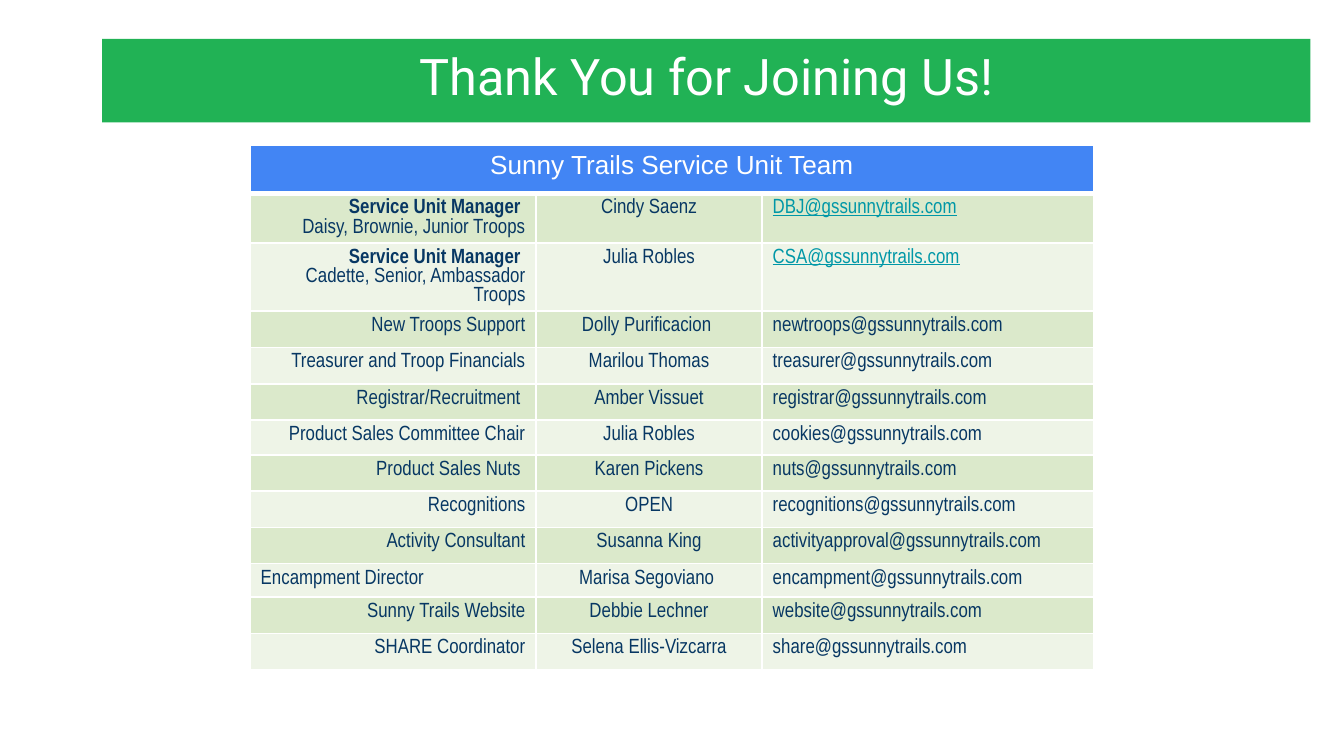
"""Build the closing slide with the service unit team contact table."""
from lxml import etree
from pptx import Presentation, util as u
from pptx.dml.color import RGBColor
from pptx.enum import shapes, text
from pptx.oxml.ns import qn

COLORS = {"white": "FFFFFF", "banner": "21B255", "header": "4285F4", "navy": "073763",
          "link": "0097A7", "band": "DBE9CB", "light": "EEF4E7"}
LEFT, CENTER, RIGHT = text.PP_ALIGN.LEFT, text.PP_ALIGN.CENTER, text.PP_ALIGN.RIGHT
TEAM = [
    ("Service Unit Manager \nDaisy, Brownie, Junior Troops", "Cindy Saenz", "DBJ"),
    ("Service Unit Manager \nCadette, Senior, Ambassador Troops", "Julia Robles", "CSA"),
    ("New Troops Support", "Dolly Purificacion ", "newtroops"),
    ("Treasurer and Troop Financials", "Marilou Thomas", "treasurer"),
    ("Registrar/Recruitment ", "Amber Vissuet", "registrar"),
    ("Product Sales Committee Chair", "Julia Robles", "cookies"),
    ("Product Sales Nuts ", "Karen Pickens", "nuts"),
    ("Recognitions", "OPEN", "recognitions"),
    ("Activity Consultant", "Susanna King", "activityapproval"),
    ("Encampment Director", "Marisa Segoviano ", "encampment"),
    ("Sunny Trails Website", "Debbie Lechner", "website"),
    ("SHARE Coordinator", "Selena Ellis-Vizcarra", "share"),
]
WIDTHS = [2.13, 1.68, 2.47]
HEIGHTS = [0.36] + [0.27] * 5 + [0.26] + [0.27] * 3 + [0.25] + [0.27] * 2


def write(p, words, align, color, **fmt):
    p.alignment = align
    r = p.add_run()
    r.text = words
    r.font.color.rgb = RGBColor.from_string(COLORS[color])
    for name, value in fmt.items():
        setattr(r.font, name, value)


def style(cell, fill, bottom=1):
    tcPr = cell._tc.get_or_add_tcPr()
    for side, width in {"lnL": 1, "lnR": 1, "lnT": 1, "lnB": bottom}.items():
        ln = etree.SubElement(tcPr, qn("a:" + side), w=str(u.Pt(width)))
        solid = etree.SubElement(ln, qn("a:solidFill"))
        etree.SubElement(solid, qn("a:srgbClr"), val=COLORS["white"])
    cell.fill.solid()
    cell.fill.fore_color.rgb = RGBColor.from_string(COLORS[fill])
    margins = {"margin_left": 0.08, "margin_right": 0.08, "margin_top": 0.04, "margin_bottom": 0.04}
    for name, value in margins.items():
        setattr(cell, name, u.Inches(value))


prs = Presentation()
prs.slide_width, prs.slide_height = u.Inches(10), u.Inches(10 * 9 / 16)
s = prs.slides.add_slide(prs.slide_layouts[6])

frame = s.shapes.add_table(len(HEIGHTS), len(WIDTHS), u.Inches(1.86), u.Inches(1.08),
                           u.Inches(sum(WIDTHS)), u.Inches(sum(HEIGHTS)))
table = frame.table
for col, width in zip(table.columns, WIDTHS):
    col.width = u.Inches(width)
for row, height in zip(table.rows, HEIGHTS):
    row.height = u.Inches(height)

for cell in table.rows[0].cells:
    style(cell, "header", bottom=3)
table.cell(0, 0).merge(table.cell(0, 2))
write(table.cell(0, 0).text_frame.paragraphs[0], "Sunny Trails Service Unit Team", CENTER,
      "white", name="Arial", size=u.Pt(14), bold=False)

for i, (role, person, mailbox) in enumerate(TEAM, 1):
    manager = "\n" in role
    role_align = LEFT if role == "Encampment Director" else RIGHT
    values = [role, person, mailbox + "@gssunnytrails.com"]
    for j, (value, align) in enumerate(zip(values, [role_align, CENTER, LEFT])):
        cell = table.cell(i, j)
        style(cell, "band" if i % 2 else "light")
        tf = cell.text_frame
        linked = manager and j == 2
        for k, line in enumerate(value.split("\n")):
            p = tf.add_paragraph() if k else tf.paragraphs[0]
            write(p, line, align, "link" if linked else "navy", name="Arial Narrow",
                  size=u.Pt(11), bold=manager and j == 0 and k == 0, underline=linked)

banner = s.shapes.add_shape(shapes.MSO_SHAPE.RECTANGLE, u.Inches(0.76), u.Inches(0.29),
                            u.Inches(8.99), u.Inches(0.62))
banner.shadow.inherit = False
banner.fill.solid()
banner.fill.fore_color.rgb = RGBColor.from_string(COLORS["banner"])
banner.line.fill.background()
tf = banner.text_frame
settings = {"margin_left": u.Inches(0.07), "margin_right": u.Inches(0.07),
            "margin_top": u.Inches(0.04), "margin_bottom": u.Inches(0.04),
            "vertical_anchor": text.MSO_ANCHOR.MIDDLE, "word_wrap": True}
for name, value in settings.items():
    setattr(tf, name, value)
p = tf.paragraphs[0]
p.line_spacing = 0.8
write(p, "Thank You for Joining Us!", CENTER, "white", name="Roboto", size=u.Pt(27))

prs.save("out.pptx")
